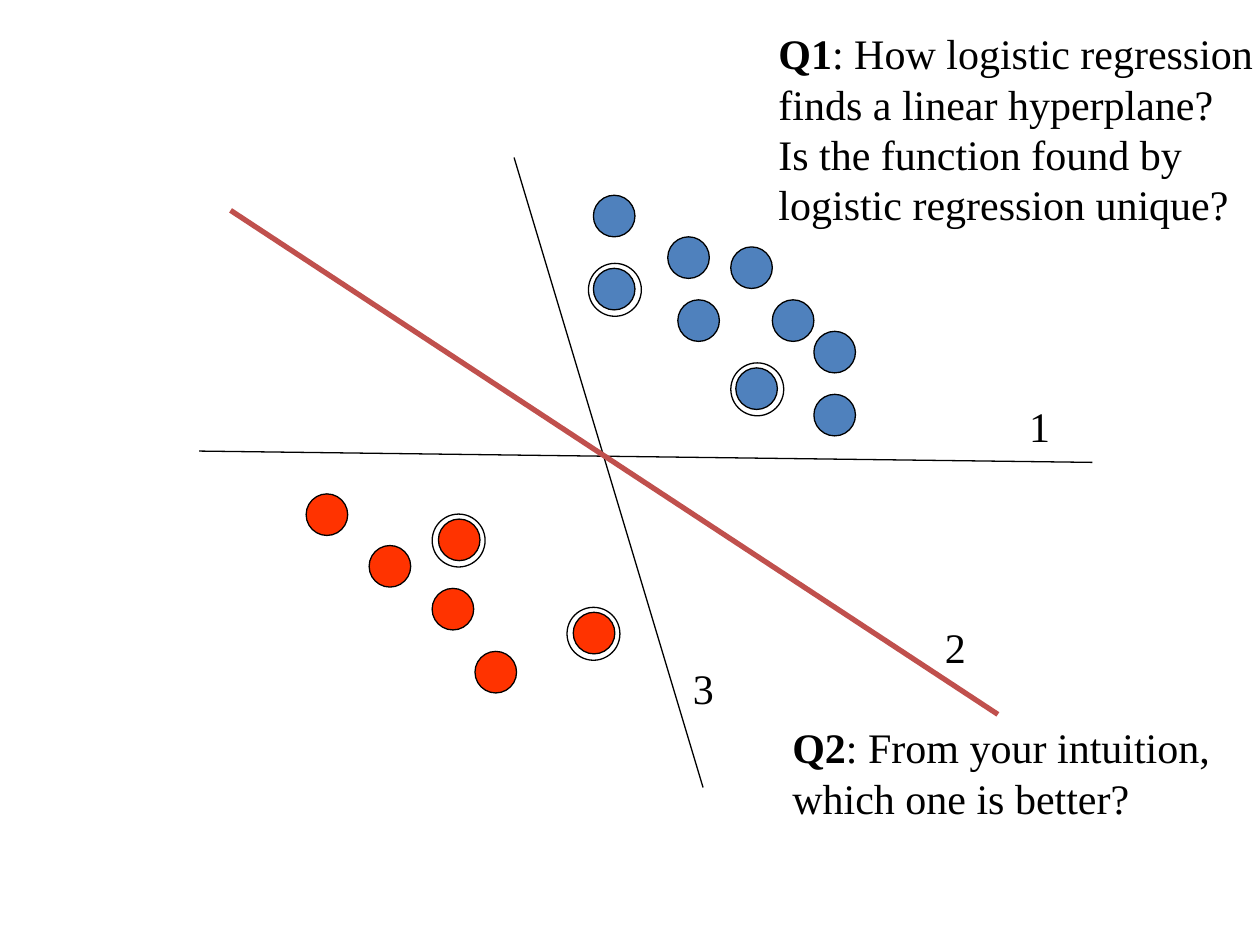
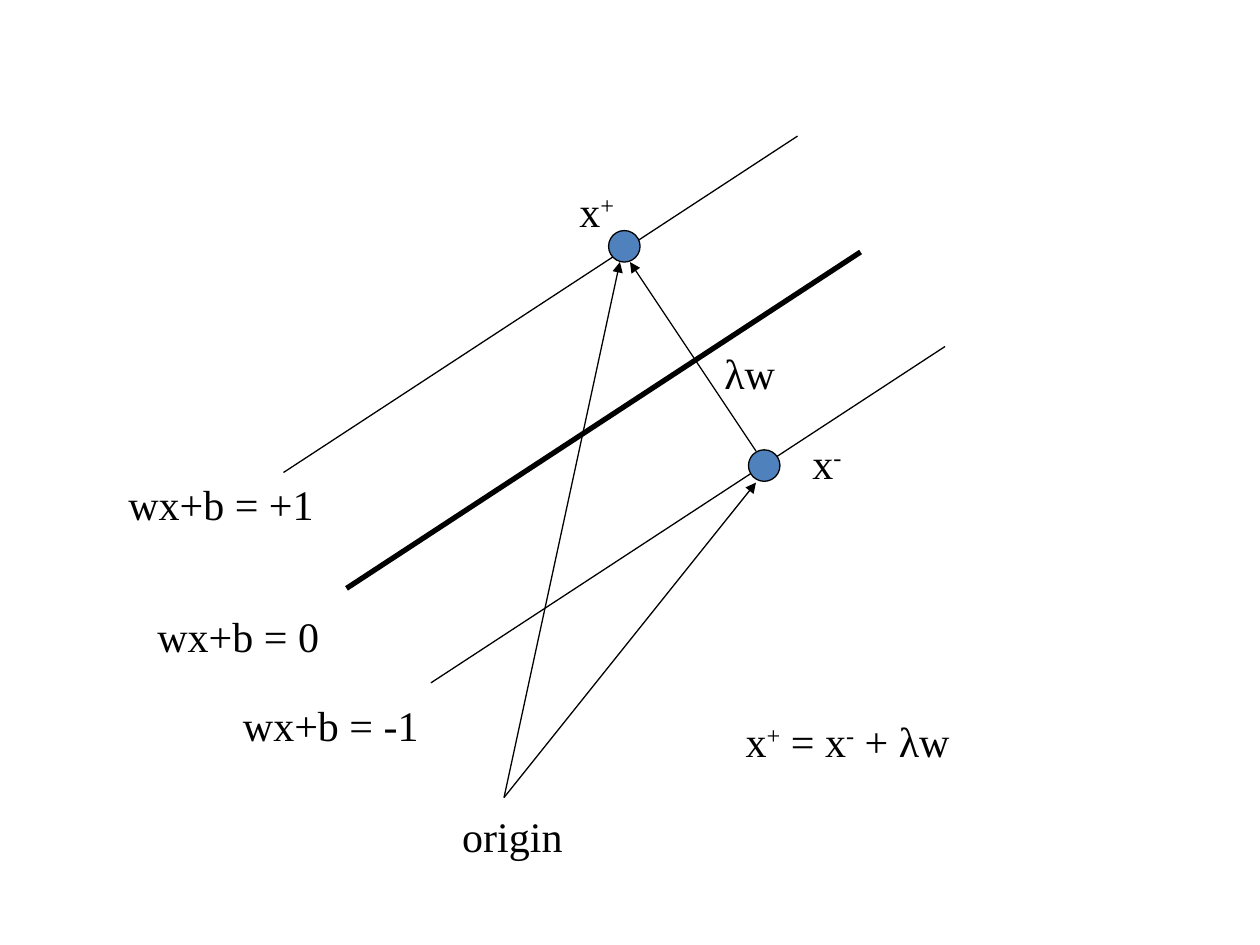
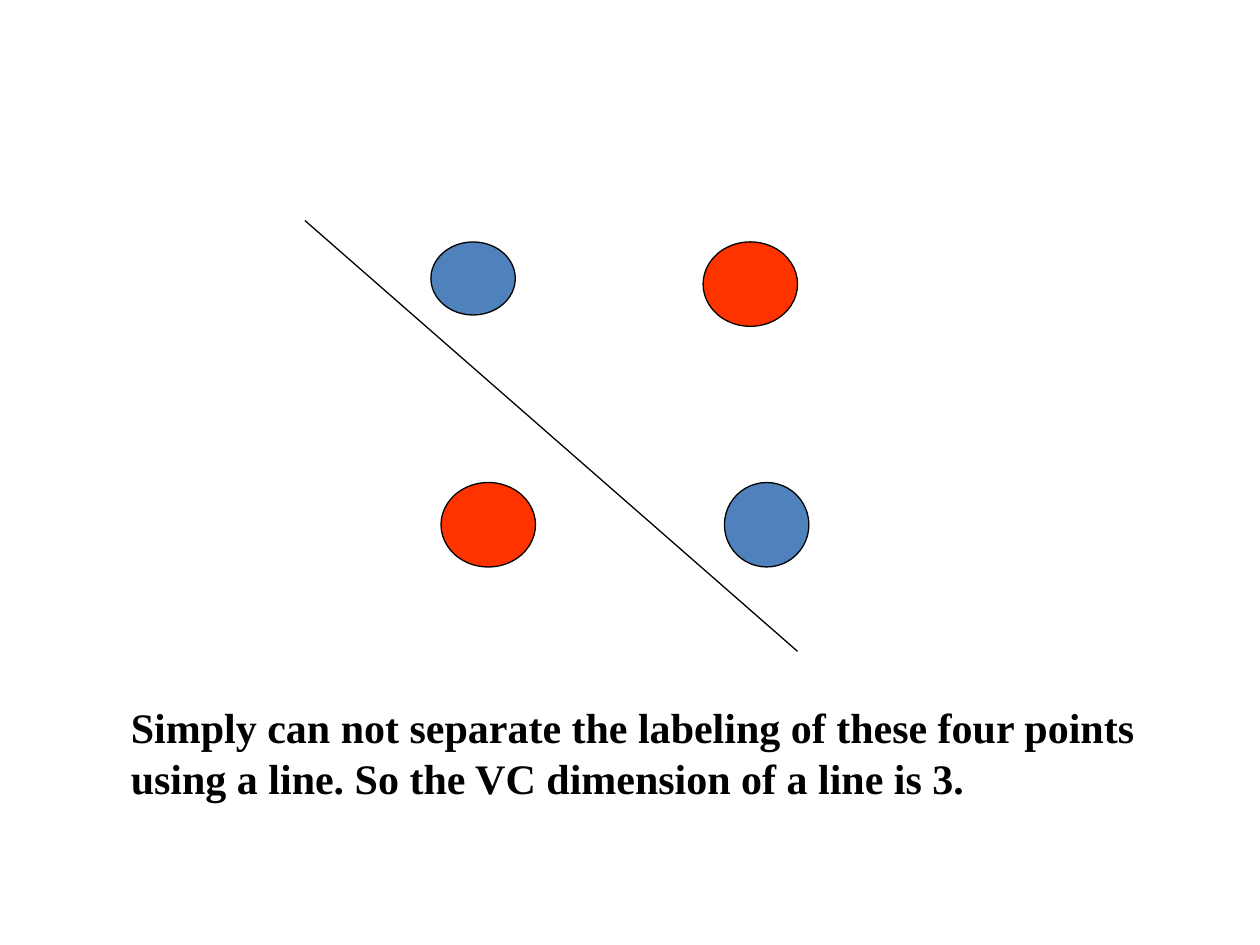
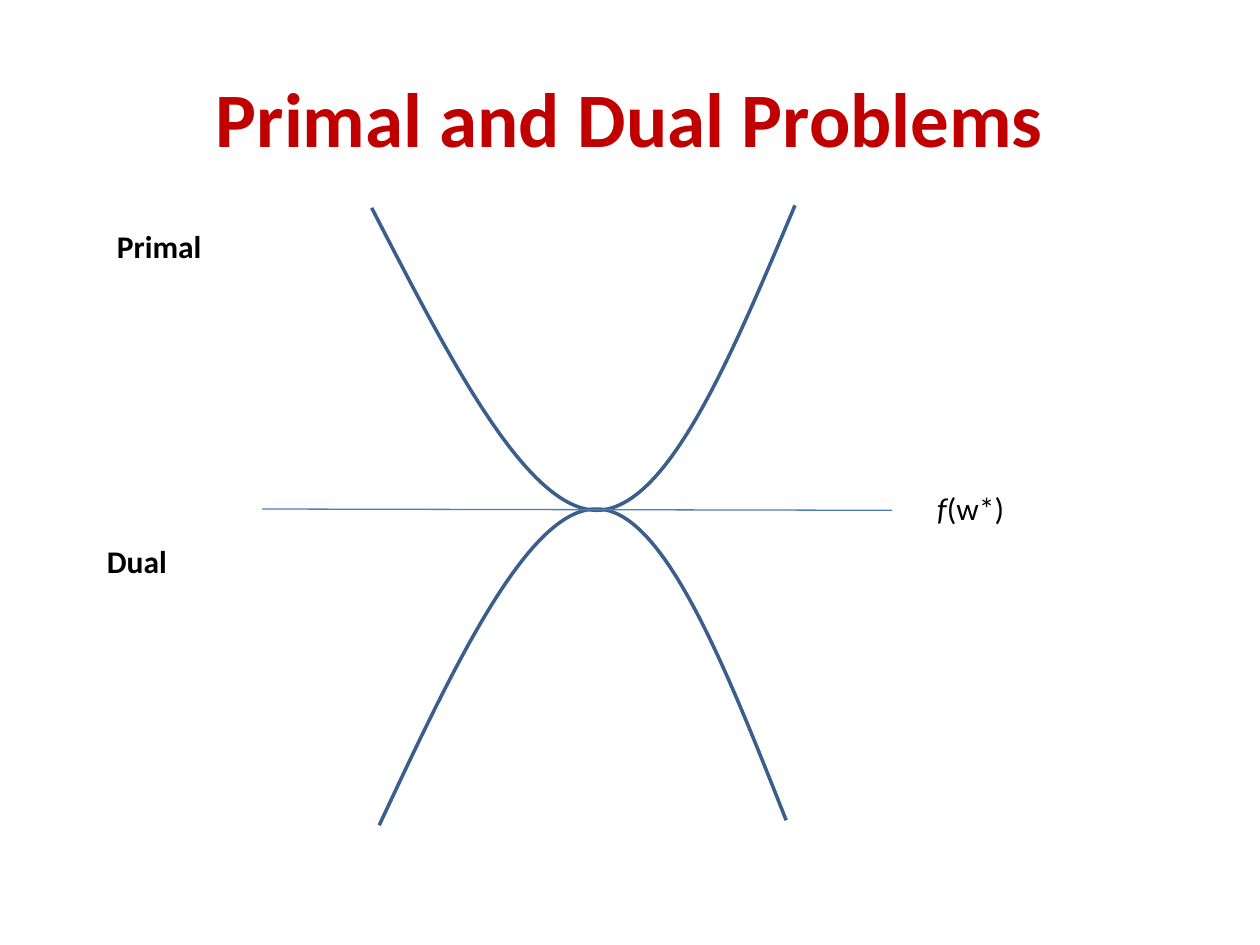
from lxml import etree
from pptx import Presentation
from pptx.dml.color import RGBColor
from pptx.enum.shapes import MSO_CONNECTOR, MSO_SHAPE
from pptx.enum.text import MSO_ANCHOR, MSO_AUTO_SIZE, PP_ALIGN
from pptx.oxml.ns import qn
from pptx.util import Inches, Pt

COLORS = {
    "black": "000000", "blue": "4F81BD", "red": "FF3300", "brick": "C0504D",
    "title": "C00000", "curve": "3A5F8C", "axis": "4B7EBC",
}
SERIF, SANS = "Times New Roman", "Calibri"
BLANK, TITLE_ONLY = 6, 5


def rgb(name):
    return RGBColor.from_string(COLORS[name])


class Deck:
    """Holds the shared style and the current slide."""

    def __init__(self):
        self.prs = Presentation()
        self.prs.slide_width, self.prs.slide_height = Inches(10), Inches(7.5)

    def new_slide(self, title=None, font=SERIF, size=24):
        self.font, self.size = font, size
        layout = BLANK if title is None else TITLE_ONLY
        self.slide = self.prs.slides.add_slide(self.prs.slide_layouts[layout])
        if title is not None:
            self.title(title)

    def style_font(self, p, size, color="black"):
        p.font.name, p.font.size = self.font, Pt(size)
        p.font.color.rgb = rgb(color)

    def title(self, text):
        sp = self.slide.shapes.title
        sp.left, sp.top, sp.width, sp.height = map(Inches, (0.5, 0.3, 9, 1.25))
        tf = sp.text_frame
        tf.text = text
        tf.vertical_anchor = MSO_ANCHOR.MIDDLE
        p = tf.paragraphs[0]
        p.alignment = PP_ALIGN.CENTER
        self.style_font(p, 44, "title")
        p.font.bold = True

    def text(self, x, y, w, h, *lines, bold=False, wrap=False):
        """Each line is a string or a list of (text, style); style is b, i, sup or empty."""
        sp = self.slide.shapes.add_textbox(*map(Inches, (x, y, w, h)))
        tf = sp.text_frame
        tf.word_wrap = wrap
        tf.auto_size = MSO_AUTO_SIZE.SHAPE_TO_FIT_TEXT
        for i, line in enumerate(lines):
            p = tf.add_paragraph() if i else tf.paragraphs[0]
            self.style_font(p, self.size)
            p.font.bold = bold
            for content, style in [(line, "")] if isinstance(line, str) else line:
                r = p.add_run()
                r.text = content
                if style == "b":
                    r.font.bold = True
                elif style == "i":
                    r.font.italic = True
                elif style == "sup":
                    r._r.get_or_add_rPr().set("baseline", "30000")

    def outline(self, sp, color="black", width=0.75):
        sp.line.color.rgb = rgb(color)
        sp.line.width = Pt(width)

    def ellipse(self, x, y, w, h, fill=None):
        sp = self.slide.shapes.add_shape(MSO_SHAPE.OVAL, *map(Inches, (x, y, w, h)))
        sp.shadow.inherit = False
        if fill:
            sp.fill.solid()
            sp.fill.fore_color.rgb = rgb(fill)
        else:
            sp.fill.background()
        self.outline(sp)

    def line(self, start, end, color="black", width=0.75, arrow=False):
        sp = self.slide.shapes.add_connector(
            MSO_CONNECTOR.STRAIGHT, *map(Inches, (*start, *end)))
        self.outline(sp, color, width)
        if arrow:
            etree.SubElement(sp.line._get_or_add_ln(), qn("a:tailEnd"), type="triangle")
        etree.SubElement(sp._element.spPr, qn("a:effectLst"))

    def curve(self, *points):
        """Bezier curve: a start, then three points for each segment."""
        start, *rest = [tuple(map(Inches, pt)) for pt in points]
        builder = self.slide.shapes.build_freeform(*start)
        builder.add_line_segments(rest, close=False)
        sp = builder.convert_to_shape()
        # Merge every three straight segments into one cubic segment
        steps = list(sp._element.iter(qn("a:lnTo")))
        for i in range(0, len(steps), 3):
            cubic = etree.Element(qn("a:cubicBezTo"))
            steps[i].addprevious(cubic)
            for step in steps[i:i + 3]:
                cubic.append(step[0])
                step.getparent().remove(step)
        sp.shadow.inherit = False
        sp.fill.background()
        self.outline(sp, "curve", 2)


def separating_lines(deck):
    deck.new_slide()
    # Points of the two classes
    points = {
        "blue": [(4.71, 1.55), (4.71, 2.13), (5.3, 1.88), (5.8, 1.96), (5.38, 2.38),
                 (6.13, 2.38), (5.84, 2.92), (6.46, 2.63), (6.46, 3.13)],
        "red": [(3.48, 4.12), (4.55, 4.86), (3.43, 4.67), (3.77, 5.17),
                (2.93, 4.33), (2.43, 3.92)],
    }
    for color, places in points.items():
        for x, y in places:
            deck.ellipse(x, y, 0.33, 0.33, color)
    # Rings around the points nearest the boundary
    for x, y in [(5.8, 2.88), (3.43, 4.08), (4.67, 2.09), (4.5, 4.82)]:
        deck.ellipse(x, y, 0.42, 0.42)
    # Candidate boundaries
    deck.line((1.58, 3.58), (8.67, 3.67))
    deck.line((4.08, 1.25), (5.58, 6.25))
    deck.line((1.83, 1.67), (7.92, 5.67), "brick", 3)
    # Questions and line numbers
    deck.text(6.19, 5.68, 4.06, 0.91, [("Q2", "b"), (": From your intuition,", "")],
              "which one is better?", wrap=True)
    deck.text(6.08, 0.17, 4, 1.72, [("Q1", "b"), (": How logistic regression", "")],
              "finds a linear hyperplane?", "Is the function found by",
              "logistic regression unique?")
    for number, x, y in [("1", 8.07, 3.13), ("2", 7.4, 4.88), ("3", 5.4, 5.21)]:
        deck.text(x, y, 0.37, 0.5, number)


def margin_geometry(deck):
    deck.new_slide()
    # Parallel margins and the boundary between them
    for x, y, width in [(2.25, 3.75, 0.75), (3.42, 5.42, 0.75), (2.75, 4.67, 3)]:
        deck.line((x, y), (x + 4.08, y - 2.67), width=width)
    deck.text(1.15, 4.8, 1.48, 0.5, "wx+b = 0")
    deck.text(0.92, 3.75, 1.67, 0.5, "wx+b = +1")
    deck.text(1.83, 5.5, 1.6, 0.5, "wx+b = -1")
    # Support points and vectors
    for x, y in [(4.83, 1.83), (5.94, 3.57)]:
        deck.ellipse(x, y, 0.25, 0.25, "blue")
    origin = (4, 6.33)
    for start, end in [(origin, (4.92, 2.08)), (origin, (6, 3.83)), ((6, 3.58), (5, 2.08))]:
        deck.line(start, end, arrow=True)
    # Vector labels
    x_plus, x_minus = [("x", ""), ("+", "sup")], [("x", ""), ("-", "sup")]
    deck.text(3.57, 6.38, 1, 0.5, "origin")
    deck.text(4.5, 1.42, 0.49, 0.5, x_plus)
    deck.text(6.35, 3.42, 0.44, 0.5, x_minus)
    deck.text(5.65, 2.71, 0.6, 0.5, "λw")
    deck.text(5.82, 5.63, 1.93, 0.5, x_plus + [(" = ", "")] + x_minus + [(" + λw", "")])


def four_points(deck):
    deck.new_slide()
    for x, y, w, h, color in [(3.42, 1.92, 0.67, 0.58, "blue"), (5.75, 3.83, 0.67, 0.67, "blue"),
                              (5.58, 1.92, 0.75, 0.67, "red"), (3.5, 3.83, 0.75, 0.67, "red")]:
        deck.ellipse(x, y, w, h, color)
    deck.text(0.94, 5.52, 8.17, 0.9,
              "Simply can not separate the labeling of these four points",
              "using a line. So the VC dimension of a line is 3.", bold=True)
    deck.line((2.42, 1.75), (6.33, 5.17))


def primal_dual(deck):
    deck.new_slide("Primal and Dual Problems", font=SANS, size=18)
    # Primal curve above, dual curve below
    deck.curve((2.95, 1.65), (3.57, 2.85), (4.18, 4.05), (4.74, 4.05),
               (5.3, 4.04), (5.8, 2.84), (6.31, 1.63))
    deck.curve((3.01, 6.55), (3.6, 5.29), (4.19, 4.04), (4.73, 4.04),
               (5.26, 4.03), (5.75, 5.27), (6.24, 6.51))
    deck.text(0.83, 1.75, 0.94, 0.4, "Primal", bold=True)
    deck.text(0.75, 4.25, 0.68, 0.4, "Dual", bold=True)
    # Shared optimum
    deck.line((2.08, 4.04), (7.08, 4.05), "axis")
    deck.text(7.34, 3.83, 0.74, 0.4, [("f", "i"), ("(w*)", "")])


def main():
    deck = Deck()
    for build in (separating_lines, margin_geometry, four_points, primal_dual):
        build(deck)
    deck.prs.save("out.pptx")


if __name__ == "__main__":
    main()
